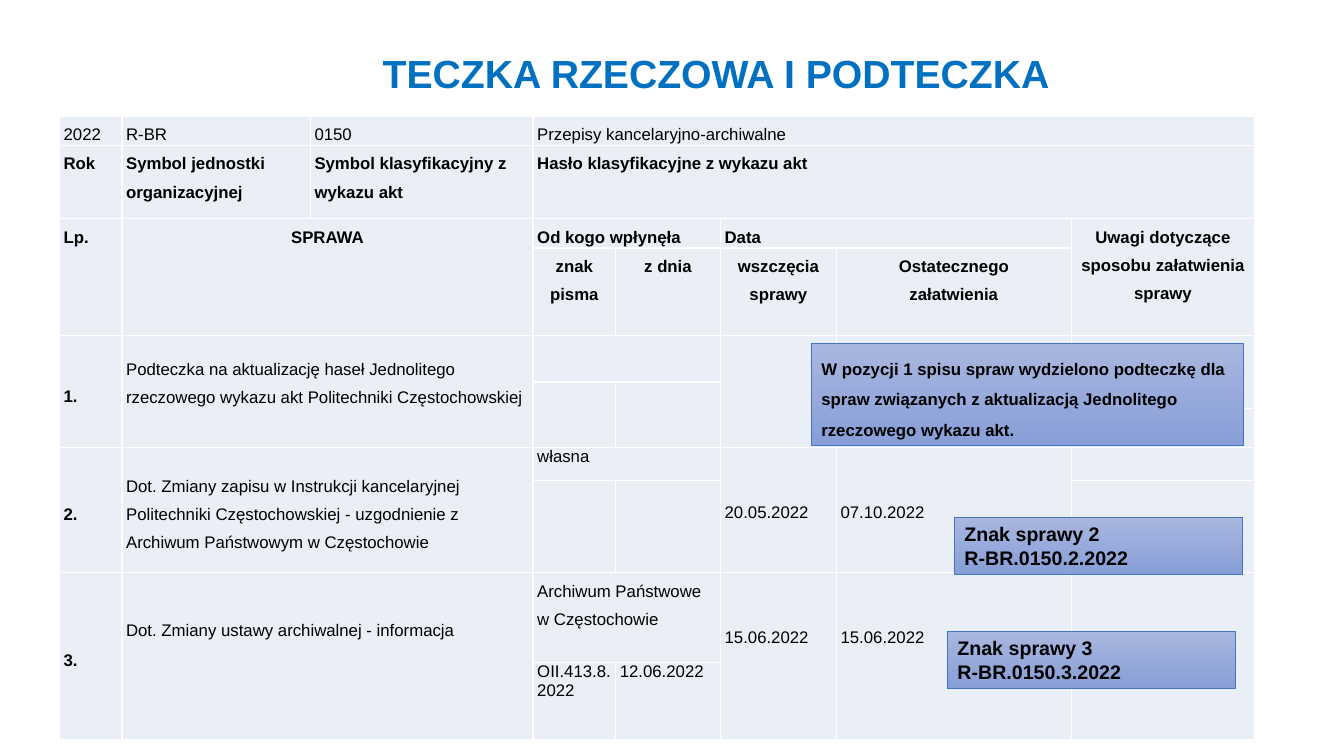
"""Build the slide on a case file and its subfolder."""
from dataclasses import dataclass

from lxml.etree import SubElement
from pptx import Presentation
from pptx.dml.color import RGBColor as RGB
from pptx.enum.shapes import MSO_SHAPE as Shape
from pptx.enum.text import MSO_ANCHOR as Anchor, MSO_AUTO_SIZE as Fit, PP_ALIGN as Align
from pptx.oxml.ns import qn
from pptx.util import Pt


@dataclass(frozen=True)
class Theme:
    """Colours, font and type sizes."""
    font: str = "Arial"
    title: RGB = RGB(0x00, 0x70, 0xC0)
    ink: RGB = RGB(0x00, 0x00, 0x00)
    cell: RGB = RGB(0xEA, 0xEF, 0xF7)
    rule: str = "FFFFFF"
    edge: RGB = RGB(0x44, 0x72, 0xC4)
    light: RGB = RGB(0xA8, 0xB7, 0xDF)
    deep: RGB = RGB(0x88, 0x9E, 0xD7)
    head: int = 28
    note: int = 14
    body: int = 12
    blank: int = 8


THEME = Theme()
COLS = [44.6, 134.6, 159.1, 59, 74.9, 82.8, 167.8, 131]
ROWS = [20.9, 52.6, 20.9, 62.6, 33.1, 18.7, 28.1, 23.8, 65.5, 64.1, 55.4]

BOLD = {"bold": True}
MID = {"anchor": Anchor.MIDDLE}
HEAD = {"bold": True, "align": Align.CENTER}
NUM = BOLD | MID
DATE = {"gap": 1, "top": 40}
TIGHT = {"gap": 1}

CELLS = [
    (0, 0, 1, 1, "2022", {}),
    (0, 1, 1, 1, "R-BR", {}),
    (0, 2, 1, 1, "0150", {}),
    (0, 3, 1, 5, "Przepisy kancelaryjno-archiwalne", {}),
    (1, 0, 1, 1, "Rok", BOLD),
    (1, 1, 1, 1, "Symbol jednostki organizacyjnej", BOLD),
    (1, 2, 1, 1, "Symbol klasyfikacyjny z wykazu akt", BOLD),
    (1, 3, 1, 5, "Hasło klasyfikacyjne z wykazu akt", BOLD),
    (2, 0, 2, 1, "Lp.", BOLD),
    (2, 1, 2, 2, "SPRAWA", HEAD),
    (2, 3, 1, 2, "Od kogo wpłynęła", NUM),
    (2, 5, 1, 2, "Data", NUM),
    (2, 7, 2, 1, "Uwagi dotyczące sposobu załatwienia sprawy", HEAD),
    (3, 3, 1, 1, "znak pisma", HEAD),
    (3, 4, 1, 1, "z dnia", HEAD),
    (3, 5, 1, 1, "wszczęcia sprawy", HEAD),
    (3, 6, 1, 1, "Ostatecznego\nzałatwienia", HEAD),
    (4, 0, 3, 1, "1.", NUM),
    (4, 1, 3, 2, "Podteczka na aktualizację haseł Jednolitego rzeczowego "
     "wykazu akt Politechniki Częstochowskiej", MID | {"low": 18}),
    (4, 3, 1, 2, "", {}),
    (4, 5, 3, 1, "", {}),
    (4, 6, 3, 1, "", {}),
    (4, 7, 2, 1, "", {}),
    (5, 3, 2, 1, "", {}),
    (5, 4, 2, 1, "", {}),
    (7, 0, 2, 1, "2.", NUM),
    (7, 1, 2, 2, "Dot. Zmiany zapisu w Instrukcji kancelaryjnej Politechniki "
     "Częstochowskiej - uzgodnienie z Archiwum Państwowym w Częstochowie", MID),
    (7, 3, 1, 2, "własna", TIGHT),
    (7, 5, 2, 1, "20.05.2022", DATE),
    (7, 6, 2, 1, "07.10.2022", DATE),
    (9, 0, 2, 1, "3.", NUM),
    (9, 1, 2, 2, "Dot. Zmiany ustawy archiwalnej - informacja", {"gap": 1, "top": 35}),
    (9, 3, 1, 2, "Archiwum Państwowe w Częstochowie", {}),
    (9, 5, 2, 1, "15.06.2022", DATE),
    (9, 6, 2, 1, "15.06.2022", DATE),
    (9, 7, 2, 1, "", {}),
    (10, 3, 1, 1, "OII.413.8.2022", TIGHT),
    (10, 4, 1, 1, "12.06.2022", TIGHT),
]

NOTES = [
    (681.8, 369.4, 205.9, 41, "Znak sprawy 2\nR-BR.0150.2.2022", THEME.note, 1),
    (676.8, 450.7, 205.9, 41, "Znak sprawy 3\nR-BR.0150.3.2022", THEME.note, 1),
    (579.6, 245.5, 308.2, 72.7, "W pozycji 1 spisu spraw wydzielono podteczkę dla spraw "
     "związanych z aktualizacją Jednolitego rzeczowego wykazu akt.", THEME.body, 1.5),
]


def write(frame, text, size, color=THEME.ink, bold=False, align=Align.LEFT, gap=1.5):
    """Fill a text frame, one paragraph for each line."""
    for i, line in enumerate(text.split("\n")):
        para = frame.add_paragraph() if i else frame.paragraphs[0]
        para.alignment, para.line_spacing = align, gap
        run = para.add_run()
        run.text = line
        font = run.font
        font.name, font.size, font.bold = THEME.font, Pt(size), bold
        font.color.rgb = color


def dress(cell):
    """Give a cell its rules, fill, margins and blank line size."""
    props = cell._tc.get_or_add_tcPr()
    for side in "LRTB":
        line = SubElement(props, qn(f"a:ln{side}"), w=str(Pt(1)))
        SubElement(SubElement(line, qn("a:solidFill")), qn("a:srgbClr"), val=THEME.rule)
    cell.fill.solid()
    cell.fill.fore_color.rgb = THEME.cell
    cell.margin_left = cell.margin_right = Pt(3)
    cell.margin_top = cell.margin_bottom = Pt(0)
    para = cell.text_frame.paragraphs[0]._p
    SubElement(para, qn("a:endParaRPr"), sz=str(THEME.blank * 100))


def set_cell(grid, row, col, tall, wide, text, anchor=Anchor.TOP, top=0, low=0, **look):
    """Merge a cell over its span and write its text."""
    cell = grid.cell(row, col)
    if tall * wide > 1:
        cell.merge(grid.cell(row + tall - 1, col + wide - 1))
    cell.vertical_anchor = anchor
    cell.margin_top, cell.margin_bottom = Pt(top), Pt(low)
    if text:
        write(cell.text_frame, text, THEME.body, **look)


def add_grid(slide):
    """Add the register of cases."""
    frame = slide.shapes.add_table(len(ROWS), len(COLS), Pt(42.5), Pt(82.8),
                                   Pt(sum(COLS)), Pt(sum(ROWS)))
    grid = frame.table
    grid.first_row = grid.horz_banding = False
    for col, width in zip(grid.columns, COLS):
        col.width = Pt(width)
    for row, height in zip(grid.rows, ROWS):
        row.height = Pt(height)
    for cell in grid.iter_cells():
        dress(cell)
    for row, col, tall, wide, text, look in CELLS:
        set_cell(grid, row, col, tall, wide, text, **look)


def add_title(slide, text):
    """Place and write the slide title."""
    title = slide.shapes.title
    title.left, title.top, title.width, title.height = map(Pt, (253.4, 15.1, 516.2, 51.8))
    frame = title.text_frame
    frame.word_wrap, frame.auto_size = True, Fit.NONE
    frame.vertical_anchor = Anchor.TOP
    write(frame, text, THEME.head, THEME.title, True, Align.CENTER)


def add_note(slide, left, top, width, height, text, size, gap):
    """Add a shaded note box."""
    box = slide.shapes.add_shape(Shape.RECTANGLE, *map(Pt, (left, top, width, height)))
    box.shadow.inherit = False
    box.fill.gradient()
    box.fill.gradient_angle = 270
    for stop, color in zip(box.fill.gradient_stops, (THEME.light, THEME.deep)):
        stop.color.rgb = color
    box.line.color.rgb, box.line.width = THEME.edge, Pt(0.5)
    frame = box.text_frame
    frame.word_wrap, frame.vertical_anchor = True, Anchor.TOP
    write(frame, text, size, bold=True, gap=gap)


def main():
    """Build and save the deck."""
    deck = Presentation()
    deck.slide_width, deck.slide_height = Pt(960), Pt(540)
    slide = deck.slides.add_slide(deck.slide_layouts.get_by_name("Title Only"))
    add_title(slide, "TECZKA RZECZOWA I PODTECZKA")
    add_grid(slide)
    for note in NOTES:
        add_note(slide, *note)
    deck.save("out.pptx")


if __name__ == "__main__":
    main()
